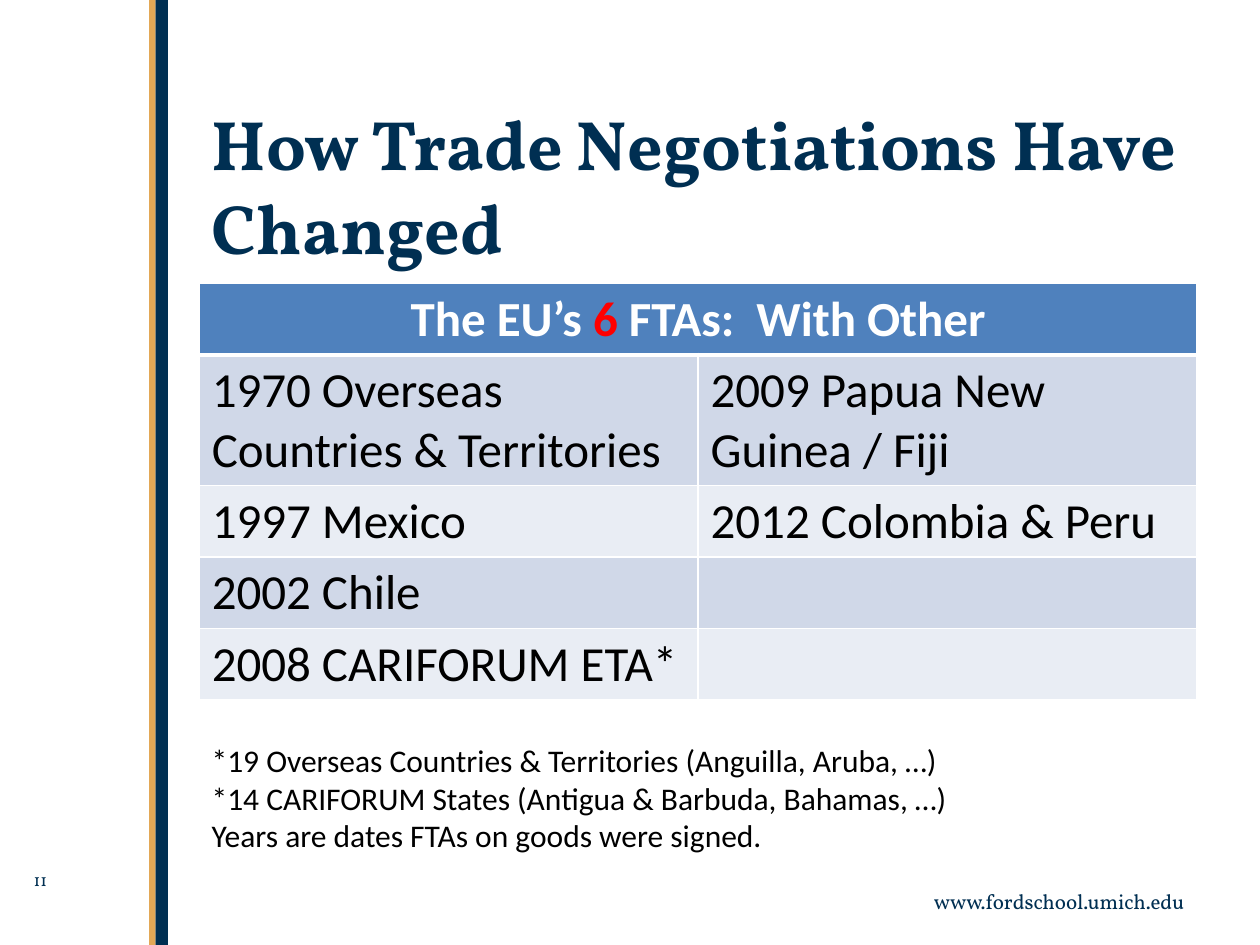
from lxml.etree import SubElement
from pptx import Presentation
from pptx.dml.color import RGBColor
from pptx.enum.shapes import MSO_SHAPE as Shape
from pptx.enum.text import MSO_ANCHOR as Anchor, PP_ALIGN as Align
from pptx.oxml.ns import qn
from pptx.util import Pt

NAVY = RGBColor(0x00, 0x2F, 0x52)
GOLD = RGBColor(0xE3, 0xA8, 0x56)
BLUE = RGBColor(0x4F, 0x81, 0xBD)
BANDS = RGBColor(0xD0, 0xD8, 0xE8), RGBColor(0xE9, 0xED, 0xF4)
RED = RGBColor(0xFF, 0, 0)
WHITE = RGBColor(0xFF, 0xFF, 0xFF)
BLACK = RGBColor(0, 0, 0)

WIDTH, HEIGHT = 720, 540
LEFT, CONTENT_WIDTH = 113.8, 570.2
TABLE_TOP, ROW_HEIGHT = 162, 29.2

TITLE = "How Trade Negotiations Have Changed"
HEADER = [("The EU’s ", WHITE), ("6", RED), (" FTAs:  With Other", WHITE)]
AGREEMENTS = [
    ("1970 Overseas Countries & Territories", "2009 Papua New Guinea / Fiji"),
    ("1997 Mexico", "2012 Colombia & Peru"),
    ("2002 Chile", ""),
    ("2008 CARIFORUM ETA*", ""),
]
NOTES = [
    "*19 Overseas Countries & Territories (Anguilla, Aruba, …)",
    "*14 CARIFORUM States (Antigua & Barbuda, Bahamas, …)",
    "Years are dates FTAs on goods were signed.",
]
BARS = [(88.8, 7.2, NAVY), (85.2, 3.6, GOLD)]  # left, width, colour


def add_run(paragraph, text, size, font, color, bold=False):
    run = paragraph.add_run()
    run.text = text
    run.font.size = Pt(size)
    run.font.name = font
    run.font.color.rgb = color
    run.font.bold = bold


def add_text(slide, box, lines, size, font, color, bold=False,
             align=Align.LEFT, anchor=Anchor.TOP):
    frame = slide.shapes.add_textbox(*map(Pt, box)).text_frame
    frame.word_wrap = True
    frame.vertical_anchor = anchor
    for index, line in enumerate(lines):
        paragraph = frame.add_paragraph() if index else frame.paragraphs[0]
        paragraph.alignment = align
        add_run(paragraph, line, size, font, color, bold)


def style_cell(cell, fill, top=1, bottom=1):
    """Fill the cell and give it white borders of the given widths."""
    properties = cell._tc.get_or_add_tcPr()
    for side, width in zip("LRTB", (1, 1, top, bottom)):
        line = SubElement(properties, qn(f"a:ln{side}"), w=str(Pt(width)))
        solid = SubElement(line, qn("a:solidFill"))
        SubElement(solid, qn("a:srgbClr"), val=str(WHITE))
    cell.fill.solid()
    cell.fill.fore_color.rgb = fill


def add_agreements(slide):
    row_count = len(AGREEMENTS) + 1
    table = slide.shapes.add_table(
        row_count, 2, Pt(LEFT), Pt(TABLE_TOP),
        Pt(CONTENT_WIDTH), Pt(ROW_HEIGHT * row_count)).table
    for row in table.rows:
        row.height = Pt(ROW_HEIGHT)

    for cell in table.rows[0].cells:
        style_cell(cell, BLUE, bottom=3)
    header = table.cell(0, 0)
    header.merge(table.cell(0, 1))
    paragraph = header.text_frame.paragraphs[0]
    paragraph.alignment = Align.CENTER
    for text, color in HEADER:
        add_run(paragraph, text, 28, "Calibri", color, bold=True)

    for index, names in enumerate(AGREEMENTS):
        for column, name in enumerate(names):
            cell = table.cell(index + 1, column)
            style_cell(cell, BANDS[index % 2], top=1 if index else 3)
            if name:
                add_run(cell.text_frame.paragraphs[0], name, 28, "Calibri", BLACK)


def main():
    presentation = Presentation()
    presentation.slide_width, presentation.slide_height = Pt(WIDTH), Pt(HEIGHT)
    slide = presentation.slides.add_slide(presentation.slide_layouts[6])

    for left, width, color in BARS:
        bar = slide.shapes.add_shape(
            Shape.RECTANGLE, Pt(left), 0, Pt(width), Pt(HEIGHT))
        bar.shadow.inherit = False
        bar.fill.solid()
        bar.fill.fore_color.rgb = color
        bar.line.fill.background()

    add_text(slide, (504, 504, 180, 21.6), ["www.fordschool.umich.edu"],
             12, "Vollkorn", NAVY, align=Align.RIGHT)
    add_text(slide, (12.2, 490.3, 66.2, 24.5), ["11"],
             10, "Vollkorn", NAVY, anchor=Anchor.MIDDLE)
    add_agreements(slide)
    add_text(slide, (LEFT, 54, CONTENT_WIDTH, 88.6), [TITLE],
             40, "Vollkorn", NAVY, bold=True)
    add_text(slide, (LEFT, 419.8, 486, 72.7), NOTES, 18, "Calibri", BLACK)

    presentation.save("out.pptx")


if __name__ == "__main__":
    main()
